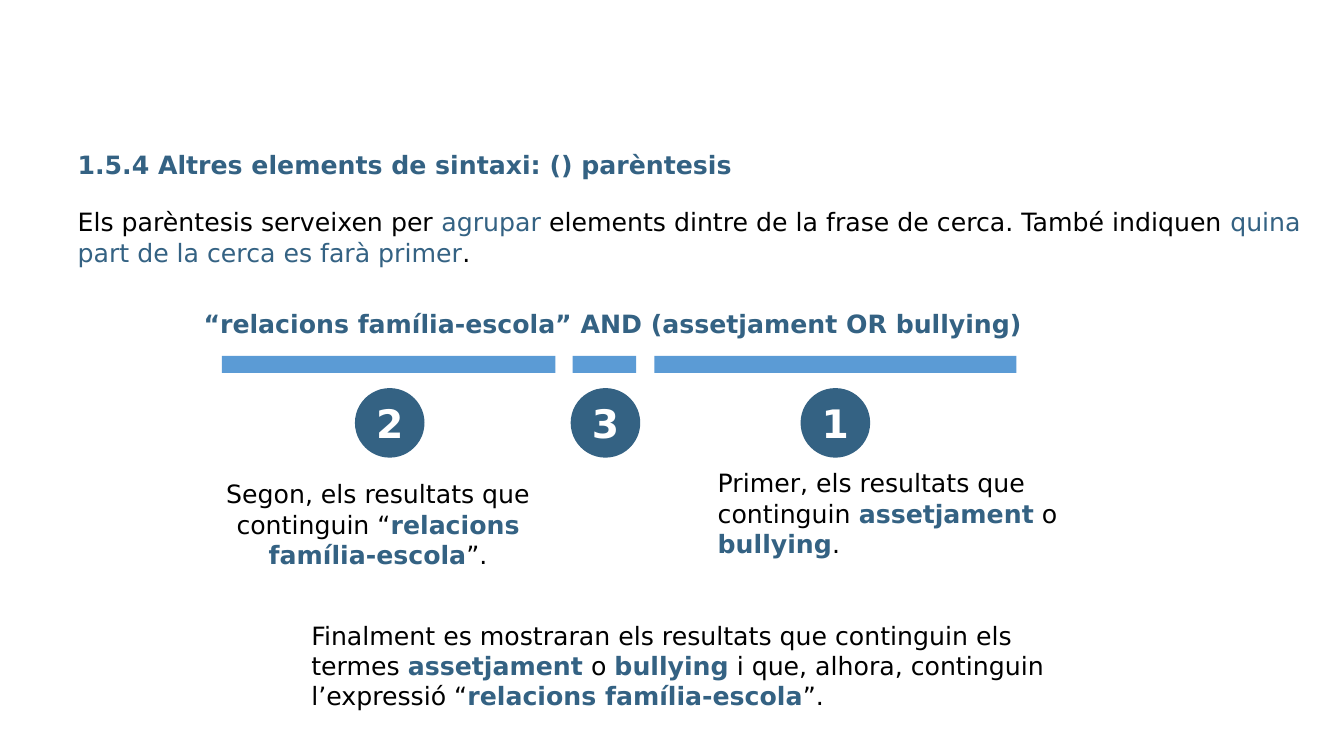
from typing import NamedTuple

from pptx import Presentation
from pptx.dml.color import RGBColor
from pptx.enum.shapes import MSO_SHAPE
from pptx.enum.text import MSO_ANCHOR, MSO_AUTO_SIZE, PP_ALIGN
from pptx.oxml.ns import qn
from pptx.util import Inches, Pt

FONT = "DejaVu Sans"
BLACK = RGBColor(0x00, 0x00, 0x00)
WHITE = RGBColor(0xFF, 0xFF, 0xFF)
NAVY = RGBColor(0x34, 0x62, 0x83)
BLUE = RGBColor(0x5B, 0x9B, 0xD5)

DISC = 0.69
DISC_TOP = 3.85
BAR_TOP = 3.53
BAR_H = 0.17


class Step(NamedTuple):
    label: str
    disc: float
    bar: float
    width: float


class Note(NamedTuple):
    text: str
    left: float
    top: float
    width: float
    height: float
    align: PP_ALIGN = PP_ALIGN.LEFT
    color: RGBColor = BLACK
    bold: bool = False


STEPS = [
    Step("2", 3.52, 2.2, 3.31),
    Step("3", 5.66, 5.68, 0.63),
    Step("1", 7.94, 6.49, 3.59),
]

# Words between asterisks are stressed
NOTES = [
    Note("“relacions família-escola” AND (assetjament OR bullying)",
         1.92, 3.01, 9.59, 0.4, PP_ALIGN.JUSTIFY, NAVY, True),
    Note("Segon, els resultats que continguin “*relacions família-escola*”.",
         1.71, 4.7, 4.08, 1.31, PP_ALIGN.CENTER),
    Note("Primer, els resultats que continguin *assetjament* o *bullying*.",
         7.02, 4.59, 4.37, 1.31),
    Note("Finalment es mostraran els resultats que continguin els termes "
         "*assetjament* o *bullying* i que, alhora, continguin l’expressió "
         "“*relacions família-escola*”.", 2.99, 6.1, 7.77, 1.31),
]


def write(shape, text: str, *, size: float = 18, color: RGBColor = BLACK,
          bold: bool = False, stress: bool = True,
          align: PP_ALIGN = PP_ALIGN.LEFT,
          anchor: MSO_ANCHOR = MSO_ANCHOR.TOP) -> None:
    """Fill a shape; parts between asterisks turn navy, and bold on stress."""
    frame = shape.text_frame
    frame.word_wrap = True
    frame.auto_size = MSO_AUTO_SIZE.NONE
    frame.vertical_anchor = anchor
    para = frame.paragraphs[0]
    para.alignment = align
    para.space_before = Pt(0)
    for index, part in enumerate(text.split("*")):
        marked = index % 2 == 1
        run = para.add_run()
        run.text = part
        run.font.name = FONT
        run.font.size = Pt(size)
        run.font.bold = bold or (marked and stress)
        run.font.color.rgb = NAVY if marked else color


def place(shape, left: float, top: float, width: float, height: float) -> None:
    shape.left, shape.top = Inches(left), Inches(top)
    shape.width, shape.height = Inches(width), Inches(height)


def draw(slide, kind: MSO_SHAPE, left: float, top: float, width: float,
         height: float, fill: RGBColor):
    shape = slide.shapes.add_shape(
        kind, Inches(left), Inches(top), Inches(width), Inches(height))
    shape.shadow.inherit = False
    shape.fill.solid()
    shape.fill.fore_color.rgb = fill
    shape.line.fill.background()
    return shape


def add_step(slide, step: Step) -> None:
    draw(slide, MSO_SHAPE.RECTANGLE, step.bar, BAR_TOP, step.width, BAR_H, BLUE)
    disc = draw(slide, MSO_SHAPE.OVAL, step.disc, DISC_TOP, DISC, DISC, NAVY)
    write(disc, step.label, size=28, color=WHITE, bold=True,
          align=PP_ALIGN.CENTER, anchor=MSO_ANCHOR.MIDDLE)


def add_note(slide, note: Note) -> None:
    box = slide.shapes.add_textbox(
        Inches(note.left), Inches(note.top),
        Inches(note.width), Inches(note.height))
    write(box, note.text, color=note.color, bold=note.bold, align=note.align)


def main() -> None:
    deck = Presentation()
    deck.slide_width, deck.slide_height = Inches(13.33), Inches(7.5)
    slide = deck.slides.add_slide(deck.slide_layouts[1])

    # Heading
    title = slide.shapes.title
    place(title, 0.67, 1.43, 10.6, 0.5)
    write(title, "1.5.4 Altres elements de sintaxi: () parèntesis",
          color=NAVY, bold=True)

    # Introduction, without bullet or indent
    body = slide.placeholders[1]
    place(body, 0.67, 2, 12.33, 0.71)
    props = body.text_frame.paragraphs[0]._p.get_or_add_pPr()
    props.set("marL", "0")
    props.set("indent", "0")
    props.append(props.makeelement(qn("a:buNone"), {}))
    write(body, "Els parèntesis serveixen per *agrupar* elements dintre de la "
          "frase de cerca. També indiquen *quina part de la cerca es farà "
          "primer*.", stress=False, align=PP_ALIGN.JUSTIFY)

    # Search order and its explanation
    for step in STEPS:
        add_step(slide, step)
    for note in NOTES:
        add_note(slide, note)

    deck.save("out.pptx")


if __name__ == "__main__":
    main()
